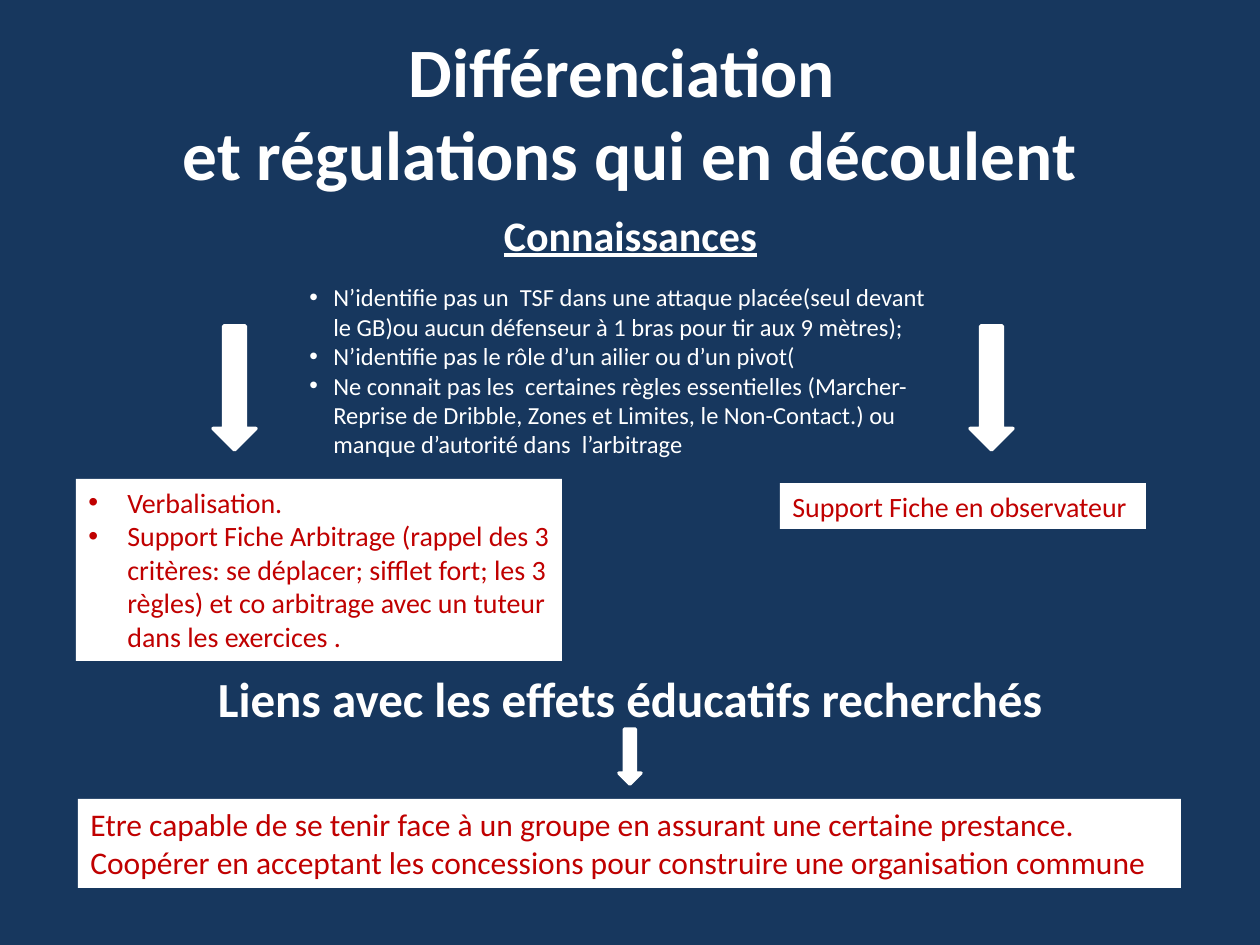
"""Build the slide on differentiation and the adjustments that follow from it."""
from lxml.etree import SubElement
from pptx import Presentation
from pptx.dml.color import RGBColor
from pptx.enum.shapes import MSO_SHAPE as SHAPE
from pptx.enum.text import MSO_ANCHOR as ANCHOR, PP_ALIGN as ALIGN
from pptx.oxml.ns import qn
from pptx.util import Pt

PX = 914400 / 126
NAVY = RGBColor(0x17, 0x37, 0x5E)
WHITE = RGBColor(0xFF, 0xFF, 0xFF)
RED = RGBColor(0xC0, 0x00, 0x00)


def px(*lengths):
    return [round(length * PX) for length in lengths]


def add_text(box, text, size, color, bold=False, align=ALIGN.LEFT, hang=0, fill=None):
    frame = slide.shapes.add_textbox(*px(*box)).text_frame
    frame.word_wrap = True
    frame.text = text
    for paragraph in frame.paragraphs:
        paragraph.alignment = align
        if hang:
            indent = px(hang)[0]
            properties = paragraph._p.get_or_add_pPr()
            properties.set("marL", str(indent))
            properties.set("indent", str(-indent))
            SubElement(properties, qn("a:buFont"), typeface="Arial")
            SubElement(properties, qn("a:buChar"), char="•")
        for run in paragraph.runs:
            run.font.name = "Calibri"
            run.font.size = Pt(size)
            run.font.bold = bold
            run.font.color.rgb = color
    if fill is not None:
        box_fill = frame._parent.fill
        box_fill.solid()
        box_fill.fore_color.rgb = fill
    return frame


prs = Presentation()
prs.slide_width, prs.slide_height = px(1260, 945)
slide = prs.slides.add_slide(prs.slide_layouts[6])
slide.background.fill.solid()
slide.background.fill.fore_color.rgb = NAVY

add_text((780, 483, 366, 46), "Support Fiche en observateur", 16, RED, fill=WHITE)

knowledge = add_text(
    (297, 203, 667, 291),
    "Connaissances\n"
    "N’identifie pas un  TSF dans une attaque placée(seul devant  le GB)ou aucun "
    "défenseur à 1 bras pour tir aux 9 mètres);\n"
    "N’identifie pas le rôle d’un ailier ou d’un pivot(\n"
    "Ne connait pas les  certaines règles essentielles (Marcher-Reprise de Dribble, "
    "Zones et Limites, le Non-Contact.) ou manque d’autorité dans  l’arbitrage",
    14, WHITE, hang=24)
heading = knowledge.paragraphs[0]
heading_properties = heading._p.pPr
for child in list(heading_properties):
    heading_properties.remove(child)
for name in ("marL", "indent"):
    heading_properties.set(name, "0")
heading.alignment = ALIGN.CENTER
heading.space_after = Pt(13)
heading_font = heading.runs[0].font
heading_font.size = Pt(24)
heading_font.bold = heading_font.underline = True

add_text(
    (76, 479, 486, 182),
    "Verbalisation.\n"
    "Support Fiche Arbitrage (rappel des 3 critères: se déplacer; sifflet fort; "
    "les 3 règles) et co arbitrage avec un tuteur dans les exercices .",
    16, RED, hang=39, fill=WHITE)

add_text((164, 662, 932, 72), "Liens avec les effets éducatifs recherchés", 28, WHITE,
         bold=True, align=ALIGN.CENTER)

add_text(
    (78, 799, 1103, 89),
    "Etre capable de se tenir face à un groupe en assurant une certaine prestance. "
    "Coopérer en acceptant les concessions pour construire une organisation commune",
    18, RED, fill=WHITE)

title = add_text((63, 33, 1134, 157), "Différenciation \vet régulations qui en découlent",
                 39.6, WHITE, bold=True, align=ALIGN.CENTER)
title.vertical_anchor = ANCHOR.MIDDLE

for box in ((213, 326, 43, 124), (619, 729, 22, 55), (970, 326, 43, 124)):
    arrow = slide.shapes.add_shape(SHAPE.DOWN_ARROW, *px(*box))
    arrow.shadow.inherit = False
    arrow.fill.solid()
    arrow.fill.fore_color.rgb = WHITE
    arrow.line.color.rgb = WHITE
    arrow.line.width = Pt(2)

prs.save("out.pptx")
